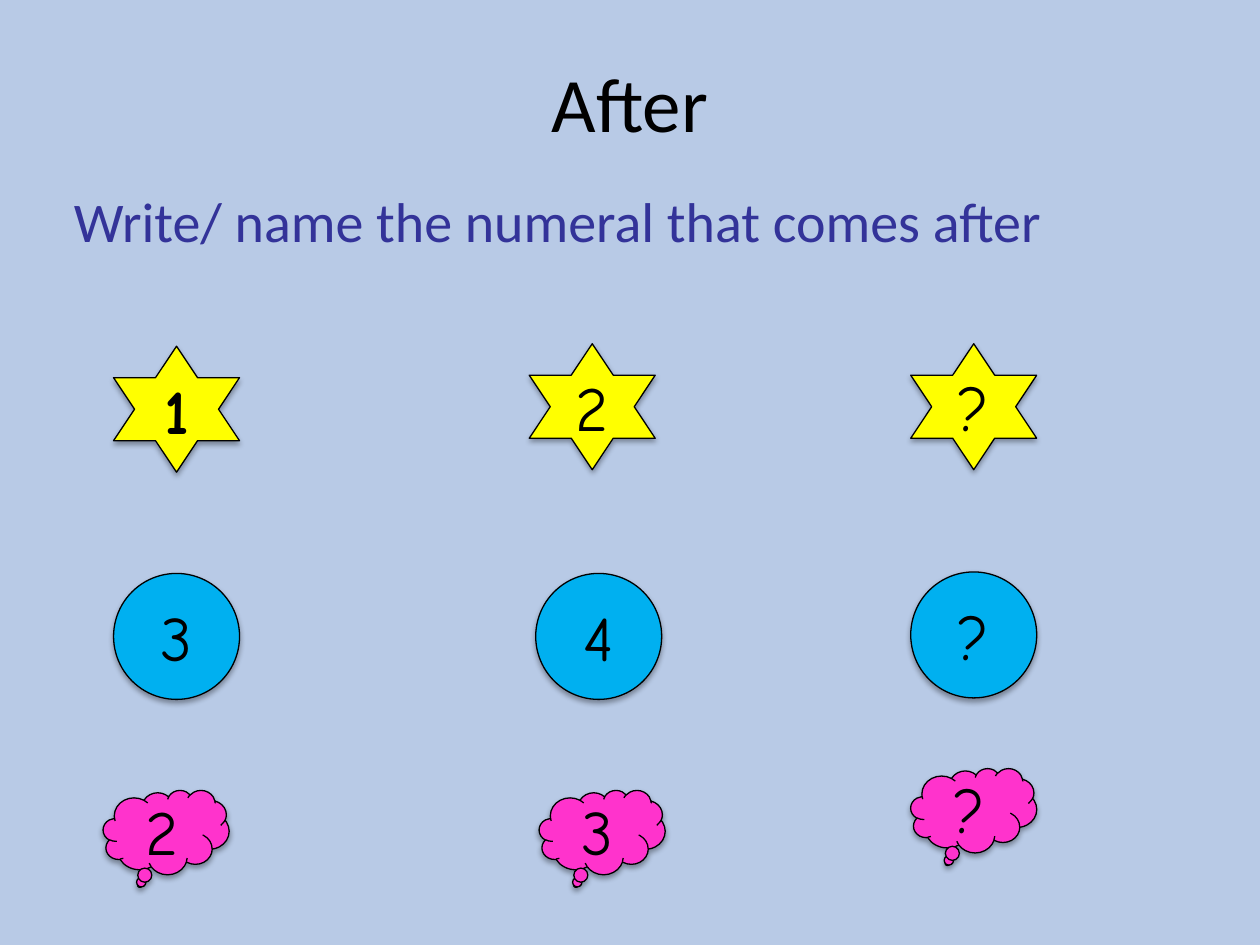
import lxml.etree
import pptx
import pptx.dml.color
import pptx.enum.shapes
import pptx.enum.text
import pptx.oxml.ns
import pptx.util
from pptx.util import Cm

COLORS = {
    "background": "B8CAE6",
    "text": "000000",
    "instruction": "333399",
    "star": "FFFF00",
    "circle": "00B0F0",
    "cloud": "FF33CC",
}
SHAPES = pptx.enum.shapes.MSO_SHAPE
ALIGN = pptx.enum.text.PP_ALIGN
ANCHOR = pptx.enum.text.MSO_ANCHOR

SIDE = 2.54
CLOUD_HEIGHT = 1.7
# preset, colour name, height, then (left, top, label) of each shape, in cm
ROWS = [
    (SHAPES.STAR_6_POINT, "star", SIDE,
     [(2.29, 6.98, "1"), (10.67, 6.93, "2"), (18.36, 6.93, "?")]),
    (SHAPES.OVAL, "circle", SIDE,
     [(2.29, 11.56, "3"), (10.8, 11.56, "4"), (18.36, 11.53, "?")]),
    (SHAPES.CLOUD_CALLOUT, "cloud", CLOUD_HEIGHT,
     [(2.08, 15.93, "2"), (10.87, 15.93, "3"), (18.36, 15.49, "?")]),
]


def rgb(name):
    return pptx.dml.color.RGBColor.from_string(COLORS[name])


def write_text(shape, text, size, font, color, align, anchor):
    frame = shape.text_frame
    frame.word_wrap = True
    frame.vertical_anchor = anchor
    paragraph = frame.paragraphs[0]
    paragraph.text = text
    paragraph.alignment = align
    paragraph.font.size = pptx.util.Pt(size)
    paragraph.font.name = font
    paragraph.font.color.rgb = rgb(color)
    return paragraph


def add_text(slide, box, text, size, color, align, anchor):
    text_box = slide.shapes.add_textbox(*map(Cm, box))
    return write_text(text_box, text, size, "Calibri", color, align, anchor)


def add_soft_shadow(shape):
    """Give the shape a faint shadow that falls straight down."""
    shape.shadow.inherit = False
    qn = pptx.oxml.ns.qn
    effects = shape.element.spPr.find(qn("a:effectLst"))
    shadow = lxml.etree.SubElement(
        effects, qn("a:outerShdw"), blurRad="40000", dist="23000",
        dir="5400000", rotWithShape="0")
    color = lxml.etree.SubElement(shadow, qn("a:srgbClr"), val=COLORS["text"])
    lxml.etree.SubElement(color, qn("a:alpha"), val="35000")


def add_numeral(slide, preset, color, box, label):
    shape = slide.shapes.add_shape(preset, *map(Cm, box))
    shape.fill.solid()
    shape.fill.fore_color.rgb = rgb(color)
    shape.line.color.rgb = rgb("text")
    shape.line.width = pptx.util.Pt(0.75)
    add_soft_shadow(shape)
    paragraph = write_text(shape, label, 36, "Comic Neue", "text",
                           ALIGN.CENTER, ANCHOR.MIDDLE)
    paragraph.font.bold = label == "1"


def main():
    presentation = pptx.Presentation()
    presentation.slide_width = Cm(25.4)
    presentation.slide_height = Cm(19.05)
    slide = presentation.slides.add_slide(presentation.slide_layouts[6])
    slide.background.fill.solid()
    slide.background.fill.fore_color.rgb = rgb("background")

    add_text(slide, (1.27, 0.46, 22.86, 3.18), "After", 44, "text",
             ALIGN.CENTER, ANCHOR.MIDDLE)
    instruction = add_text(slide, (1.24, 3.63, 22.86, 14.88),
                           "Write/ name the numeral that comes after", 32,
                           "instruction", ALIGN.LEFT, ANCHOR.TOP)
    instruction.space_before = pptx.util.Pt(6.4)

    for preset, color, height, numerals in ROWS:
        for left, top, label in numerals:
            add_numeral(slide, preset, color, (left, top, SIDE, height), label)

    presentation.save("out.pptx")


if __name__ == "__main__":
    main()
